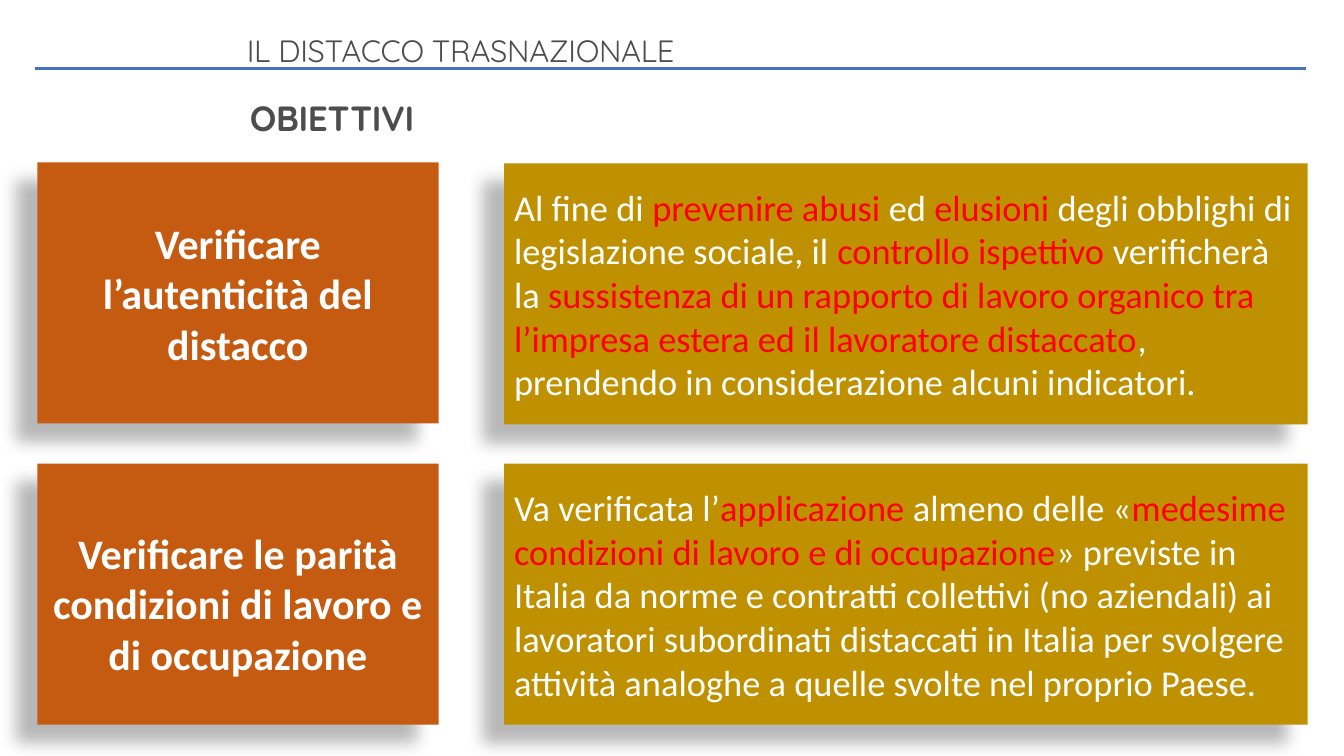
"""Build the slide on the goals of checks on transnational postings."""
from lxml import etree
from pptx import Presentation
from pptx.dml.color import RGBColor
from pptx.enum.shapes import MSO_CONNECTOR as Connector, MSO_SHAPE as Shape
from pptx.enum.text import MSO_ANCHOR as Anchor, PP_ALIGN as Align
from pptx.oxml import parse_xml
from pptx.oxml.ns import nsdecls, qn
from pptx.util import Pt

PX = 9144
COLORS = {
    "rule": "4472C4",
    "heading": "4D4D4D",
    "goal": "C55A11",
    "detail": "BF9000",
    "text": "FFFFFF",
    "emphasis": "FF0000",
    "shadow": "000000",
}
SHADOW = (
    f'<a:outerShdw {nsdecls("a")} blurRad="{Pt(11.8)}" dist="{Pt(19.7)}" '
    'dir="8460000" algn="tr" rotWithShape="0">'
    f'<a:srgbClr val="{COLORS["shadow"]}"><a:alpha val="28000"/></a:srgbClr>'
    "</a:outerShdw>"
)


def add_run(paragraph, text, *, size, color, font="Calibri", bold=False, spacing=None):
    """Append a formatted run to the paragraph."""
    run = paragraph.add_run()
    run.text = text
    run.font.name = font
    run.font.size = Pt(size)
    run.font.bold = bold
    run.font.color.rgb = RGBColor.from_string(COLORS[color])
    if spacing is not None:
        run.font._element.set("spc", str(spacing))


def add_panel(left, top, width, color):
    """Add a shadowed rectangle and return its text frame."""
    shape = slide.shapes.add_shape(
        Shape.RECTANGLE, left * PX, top * PX, width * PX, 259 * PX
    )
    shape.fill.solid()
    shape.fill.fore_color.rgb = RGBColor.from_string(COLORS[color])
    shape.line.fill.background()
    shape.shadow.inherit = False
    shape._element.spPr.find(qn("a:effectLst")).append(parse_xml(SHADOW))
    shape.text_frame.word_wrap = True
    shape.text_frame.vertical_anchor = Anchor.MIDDLE
    return shape.text_frame


presentation = Presentation()
presentation.slide_width = 1333 * PX
presentation.slide_height = 750 * PX
slide = presentation.slides.add_slide(presentation.slide_layouts[6])

rule = slide.shapes.add_connector(
    Connector.STRAIGHT, 35 * PX, 68 * PX, 1295 * PX, 68 * PX
)
rule.line.color.rgb = RGBColor.from_string(COLORS["rule"])
rule.line.width = Pt(2.25)
etree.SubElement(rule._element.spPr, qn("a:effectLst"))

headings = [
    ("IL DISTACCO TRASNAZIONALE", 235, 31, 22, False),
    ("OBIETTIVI", 238, 96, 25, True),
]
for text, left, top, size, bold in headings:
    box = slide.shapes.add_textbox(left * PX, top * PX, 864 * PX, 33 * PX)
    box.text_frame.word_wrap = True
    paragraph = box.text_frame.paragraphs[0]
    paragraph.line_spacing = 0.9
    add_run(paragraph, text, size=size, color="heading", font="Quicksand",
            bold=bold, spacing=-20)

goals = [
    (161, 162, 5, "Verificare l’autenticità del distacco", [
        ("Al fine di ", "text"),
        ("prevenire abusi ", "emphasis"),
        ("ed ", "text"),
        ("elusioni", "emphasis"),
        (" degli obblighi di legislazione sociale, il ", "text"),
        ("controllo ispettivo ", "emphasis"),
        ("verificherà la ", "text"),
        ("sussistenza di un rapporto di lavoro organico tra "
         "l’impresa estera ed il lavoratore distaccato", "emphasis"),
        (", prendendo in considerazione alcuni indicatori.", "text"),
    ]),
    (460, 460, 22, "Verificare le parità condizioni di lavoro e di occupazione", [
        ("Va verificata l’", "text"),
        ("applicazione ", "emphasis"),
        ("almeno delle «", "text"),
        ("medesime condizioni di lavoro e di occupazione", "emphasis"),
        ("» previste in Italia da norme e contratti collettivi (no aziendali) ai "
         "lavoratori subordinati distaccati in Italia per svolgere attività "
         "analoghe a quelle svolte nel proprio Paese.", "text"),
    ]),
]
for goal_top, detail_top, goal_margin, goal, details in goals:
    frame = add_panel(37, goal_top, 398, "goal")
    frame.margin_top = goal_margin * PX
    frame.paragraphs[0].alignment = Align.CENTER
    add_run(frame.paragraphs[0], goal, size=30, color="text", bold=True)

    frame = add_panel(500, detail_top, 797, "detail")
    frame.paragraphs[0].alignment = Align.LEFT
    for text, color in details:
        add_run(frame.paragraphs[0], text, size=26, color=color)

presentation.save("out.pptx")
